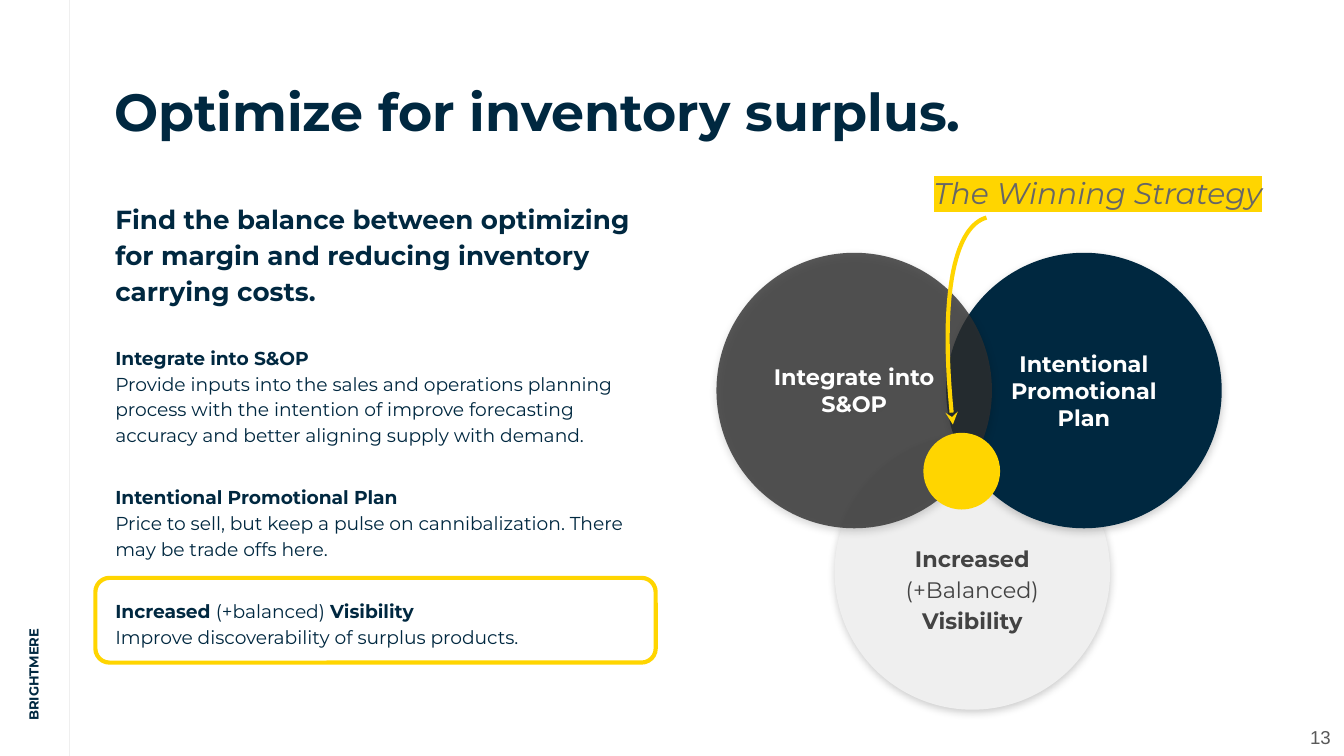
from lxml.etree import SubElement
from pptx import Presentation
from pptx.dml.color import RGBColor
from pptx.enum.shapes import MSO_CONNECTOR, MSO_SHAPE as SHAPE
from pptx.enum.text import MSO_ANCHOR as ANCHOR, PP_ALIGN as ALIGN
from pptx.oxml.ns import qn
from pptx.util import Pt

NAVY, YELLOW, PALE, WHITE = "002840", "FFD500", "EFEFEF", "FFFFFF"
CHARCOAL, GREY = "2E2E2E", "434343"
FONT = "Montserrat"
CIRCLE = 147.6
SECTION_GAP = 19.5


def rgb(value):
    return RGBColor.from_string(value)


def set_line(s, color, width):
    s.line.color.rgb = rgb(color)
    s.line.width = Pt(width)


def add_run(p, text, size, color=NAVY, bold=False, italic=False, font=FONT):
    r = p.add_run()
    r.text = text
    r.font.name = font
    r.font.size = Pt(size)
    r.font.bold = bold
    r.font.italic = italic
    r.font.color.rgb = rgb(color)
    return r


def highlight(r, color):
    fill = r.font._element.find(qn("a:solidFill"))
    mark = SubElement(r.font._element, qn("a:highlight"))
    SubElement(mark, qn("a:srgbClr"), val=color)
    fill.addnext(mark)


def set_frame(s, anchor=ANCHOR.TOP, top=7.2):
    tf = s.text_frame
    tf.word_wrap = True
    tf.vertical_anchor = anchor
    tf.margin_left = tf.margin_right = tf.margin_bottom = Pt(7.2)
    tf.margin_top = Pt(top)
    return tf


def add_label(slide, box, text, size, align=ALIGN.LEFT, anchor=ANCHOR.TOP,
              rotation=0, **style):
    """Add a one-run text box and return its run."""
    s = slide.shapes.add_textbox(*map(Pt, box))
    s.rotation = rotation
    p = set_frame(s, anchor).paragraphs[0]
    p.alignment = align
    return add_run(p, text, size, **style)


def add_shape(slide, kind, box, fill=None, line=None, width=1):
    s = slide.shapes.add_shape(kind, *map(Pt, box))
    s.shadow.inherit = False
    if fill:
        s.fill.solid()
        s.fill.fore_color.rgb = rgb(fill)
    else:
        s.fill.background()
    if line:
        set_line(s, line, width)
    else:
        s.line.fill.background()
    return s


def add_soft_shadow(s):
    effects = s._element.spPr.find(qn("a:effectLst"))
    shadow = SubElement(effects, qn("a:outerShdw"), blurRad=str(Pt(4.5)),
                        dist=str(Pt(1.5)), dir="5400000", algn="bl",
                        rotWithShape="0")
    color = SubElement(shadow, qn("a:srgbClr"), val="000000")
    SubElement(color, qn("a:alpha"), val="20000")


def add_circle(slide, left, top, fill, runs, color=WHITE, spacing=1.0,
               inset=7.2, alpha=None):
    s = add_shape(slide, SHAPE.OVAL, (left, top, CIRCLE, CIRCLE), fill)
    add_soft_shadow(s)
    if alpha:
        clr = s._element.spPr.find(qn("a:solidFill"))[0]
        SubElement(clr, qn("a:alpha"), val=str(alpha * 1000))
    p = set_frame(s, ANCHOR.MIDDLE, inset).paragraphs[0]
    p.alignment = ALIGN.CENTER
    p.line_spacing = spacing
    for text, bold in runs:
        add_run(p, text, 12, color, bold)


def add_curved_arrow(slide, start, *controls):
    """Draw one cubic curve from start, ending in an arrowhead."""
    builder = slide.shapes.build_freeform(*map(Pt, start))
    builder.add_line_segments([tuple(map(Pt, c)) for c in controls], close=False)
    s = builder.convert_to_shape()
    s.shadow.inherit = False
    s.fill.background()
    set_line(s, YELLOW, 2.25)
    path = s._element.spPr.find(".//" + qn("a:path"))
    segments = path.findall(qn("a:lnTo"))
    curve = SubElement(path, qn("a:cubicBezTo"))
    for segment in segments:
        curve.append(segment[0])
        path.remove(segment)
    SubElement(s.line._get_or_add_ln(), qn("a:tailEnd"), type="stealth")


def add_margin_rule(slide):
    c = slide.shapes.add_connector(MSO_CONNECTOR.STRAIGHT, Pt(37.4), Pt(0),
                                   Pt(37.4), Pt(405))
    set_line(c, PALE, 0.75)
    SubElement(c._element.spPr, qn("a:effectLst"))


def add_body(slide, box, lead, sections):
    tf = set_frame(slide.shapes.add_textbox(*map(Pt, box)))
    p = tf.paragraphs[0]
    p.line_spacing = 1.15
    add_run(p, lead, 14, bold=True)
    for heading, detail in sections:
        for runs, gap in ((heading, SECTION_GAP), ([(detail, False)], 0)):
            p = tf.add_paragraph()
            p.line_spacing = 1.15
            p.space_before = Pt(gap)
            for text, bold in runs:
                add_run(p, text, 10, bold=bold)


def main():
    prs = Presentation()
    prs.slide_width, prs.slide_height = Pt(720), Pt(405)
    slide = prs.slides.add_slide(prs.slide_layouts[6])

    add_margin_rule(slide)
    add_label(slide, (-110.2, 246.2, 256.3, 37.4), "BRIGHTMERE", 7,
              anchor=ANCHOR.MIDDLE, rotation=270, bold=True)
    add_shape(slide, SHAPE.ROUNDED_RECTANGLE, (51.1, 309.6, 300.2, 45.4),
              line=YELLOW, width=2.25)
    add_label(slide, (676.8, 379.4, 43.2, 31), "13", 10, ALIGN.RIGHT,
              ANCHOR.MIDDLE, color="595959", font="Arial")

    add_circle(slide, 447.1, 232.6, PALE,
               [("Increased ", True), ("(+Balanced)", False), (" Visibility", True)],
               color=GREY, spacing=1.15, inset=24)
    add_circle(slide, 506.9, 135.4, NAVY, [("Intentional Promotional Plan", True)])
    strategy = add_label(slide, (486.7, 86.4, 196.6, 37.4), "The Winning Strategy",
                         16, ALIGN.RIGHT, color="666666", italic=True)
    highlight(strategy, YELLOW)
    add_circle(slide, 383.8, 135.4, CHARCOAL, [("Integrate into S&OP", True)],
               alpha=80)
    add_curved_arrow(slide, (528.5, 116.6), (512.6, 121), (502.6, 155.5),
                     (510.5, 227.5))

    add_body(slide, (54.7, 99.4, 305.3, 254.9),
             "Find the balance between optimizing for margin and reducing "
             "inventory carrying costs.",
             [([("Integrate into S&OP", True)],
               "Provide inputs into the sales and operations planning process with "
               "the intention of improve forecasting accuracy and better aligning "
               "supply with demand."),
              ([("Intentional Promotional Plan", True)],
               "Price to sell, but keep a pulse on cannibalization. There may be "
               "trade offs here."),
              ([("Increased ", True), ("(+balanced)", False), (" Visibility", True)],
               "Improve discoverability of surplus products.")])
    add_shape(slide, SHAPE.OVAL, (495.4, 232.6, 39.6, 39.6), YELLOW, YELLOW, 1.5)
    add_label(slide, (54, 35.3, 529.2, 45.4), "Optimize for inventory surplus.",
              28, bold=True)
    prs.save("out.pptx")


if __name__ == "__main__":
    main()
